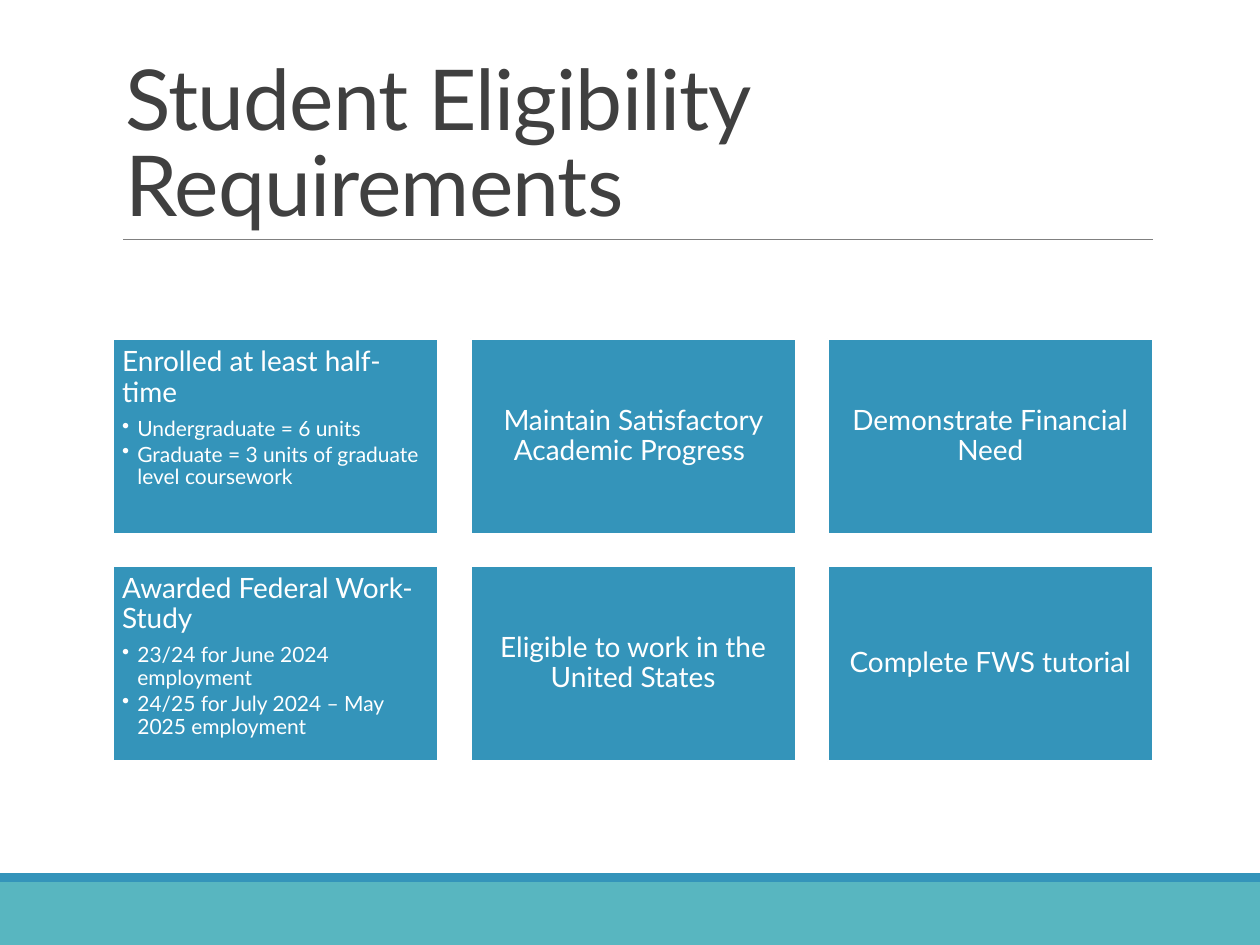
import pptx
import pptx.dml.color
import pptx.enum.shapes
import pptx.enum.text
import pptx.oxml.ns
import pptx.util
from lxml import etree

Inches = pptx.util.Inches
Pt = pptx.util.Pt
ANCHOR = pptx.enum.text.MSO_ANCHOR
ALIGN = pptx.enum.text.PP_ALIGN

FONT = "Lato"
BLUE, TEAL, WHITE = "3494BA", "58B6C0", "FFFFFF"
CARD_LEFT, CARD_TOP = 0.9, 2.69
CARD_WIDTH, CARD_HEIGHT = 2.58, 1.55
COLUMN_STEP, ROW_STEP = 2.835, 1.8

# Each row holds cards of (heading, bullets).
CARD_ROWS = [
    [
        ("Enrolled at least half-time",
         ["Undergraduate = 6 units",
          "Graduate = 3 units of graduate level coursework"]),
        ("Maintain Satisfactory Academic Progress ", []),
        ("Demonstrate Financial Need", []),
    ],
    [
        ("Awarded Federal Work-Study",
         ["23/24 for June 2024 employment",
          "24/25 for July 2024 – May 2025 employment"]),
        ("Eligible to work in the United States", []),
        ("Complete FWS tutorial", []),
    ],
]


def color(value):
    return pptx.dml.color.RGBColor.from_string(value)


def add_rectangle(slide, left, top, width, height, fill, line=None):
    shape = slide.shapes.add_shape(
        pptx.enum.shapes.MSO_SHAPE.RECTANGLE,
        Inches(left), Inches(top), Inches(width), Inches(height))
    shape.shadow.inherit = False
    shape.fill.solid()
    shape.fill.fore_color.rgb = color(fill)
    if line:
        shape.line.color.rgb = color(line)
        shape.line.width = Pt(1.25)
    else:
        shape.line.fill.background()
    return shape


def add_run(paragraph, text, size, text_color):
    run = paragraph.add_run()
    run.text = text
    run.font.name = FONT
    run.font.size = Pt(size)
    run.font.color.rgb = color(text_color)
    return run


def add_rule(slide):
    rule = slide.shapes.add_connector(
        pptx.enum.shapes.MSO_CONNECTOR.STRAIGHT,
        Inches(0.98), Inches(1.9), Inches(9.15), Inches(1.9))
    rule.line.color.rgb = color("808080")
    rule.line.width = Pt(0.5)
    etree.SubElement(rule._element.spPr, pptx.oxml.ns.qn("a:effectLst"))


def add_title(slide, text):
    box = slide.shapes.add_textbox(
        Inches(0.9), Inches(0.31), Inches(8.25), Inches(1.59))
    frame = box.text_frame
    frame.word_wrap = True
    frame.vertical_anchor = ANCHOR.BOTTOM
    paragraph = frame.paragraphs[0]
    paragraph.line_spacing = 0.85
    run = add_run(paragraph, text, 48, "404040")
    run.font._element.set("spc", "-50")


def set_bullet(paragraph):
    properties = paragraph._p.get_or_add_pPr()
    properties.set("marL", str(Inches(0.12)))
    properties.set("indent", str(Inches(-0.12)))
    bullet = etree.SubElement(properties, pptx.oxml.ns.qn("a:buChar"))
    bullet.set("char", "•")


def add_card(slide, left, top, heading, bullets):
    """Bulleted cards read from the top left; the others are centred."""
    card = add_rectangle(slide, left, top, CARD_WIDTH, CARD_HEIGHT, BLUE, WHITE)
    frame = card.text_frame
    frame.word_wrap = True
    frame.margin_left = frame.margin_right = Inches(0.07)
    frame.margin_top = frame.margin_bottom = Inches(0.07)
    frame.vertical_anchor = ANCHOR.TOP if bullets else ANCHOR.MIDDLE

    paragraph = frame.paragraphs[0]
    paragraph.alignment = ALIGN.LEFT if bullets else ALIGN.CENTER
    paragraph.line_spacing = 0.9
    paragraph.space_after = Pt(5.6)
    add_run(paragraph, heading, 16, WHITE)

    for text in bullets:
        paragraph = frame.add_paragraph()
        paragraph.level = 1
        paragraph.alignment = ALIGN.LEFT
        paragraph.line_spacing = 0.9
        paragraph.space_after = Pt(1.8)
        set_bullet(paragraph)
        add_run(paragraph, text, 12, WHITE)


def main():
    presentation = pptx.Presentation()
    presentation.slide_width = Inches(10)
    presentation.slide_height = Inches(7.5)
    slide = presentation.slides.add_slide(presentation.slide_layouts[6])

    add_rectangle(slide, 0, 7, 10, 0.5, TEAL)
    add_rectangle(slide, 0, 6.93, 10, 0.07, BLUE)
    add_rule(slide)
    add_title(slide, "Student Eligibility Requirements")
    for row, cards in enumerate(CARD_ROWS):
        for column, (heading, bullets) in enumerate(cards):
            add_card(slide, CARD_LEFT + column * COLUMN_STEP,
                     CARD_TOP + row * ROW_STEP, heading, bullets)

    presentation.save("out.pptx")


if __name__ == "__main__":
    main()
